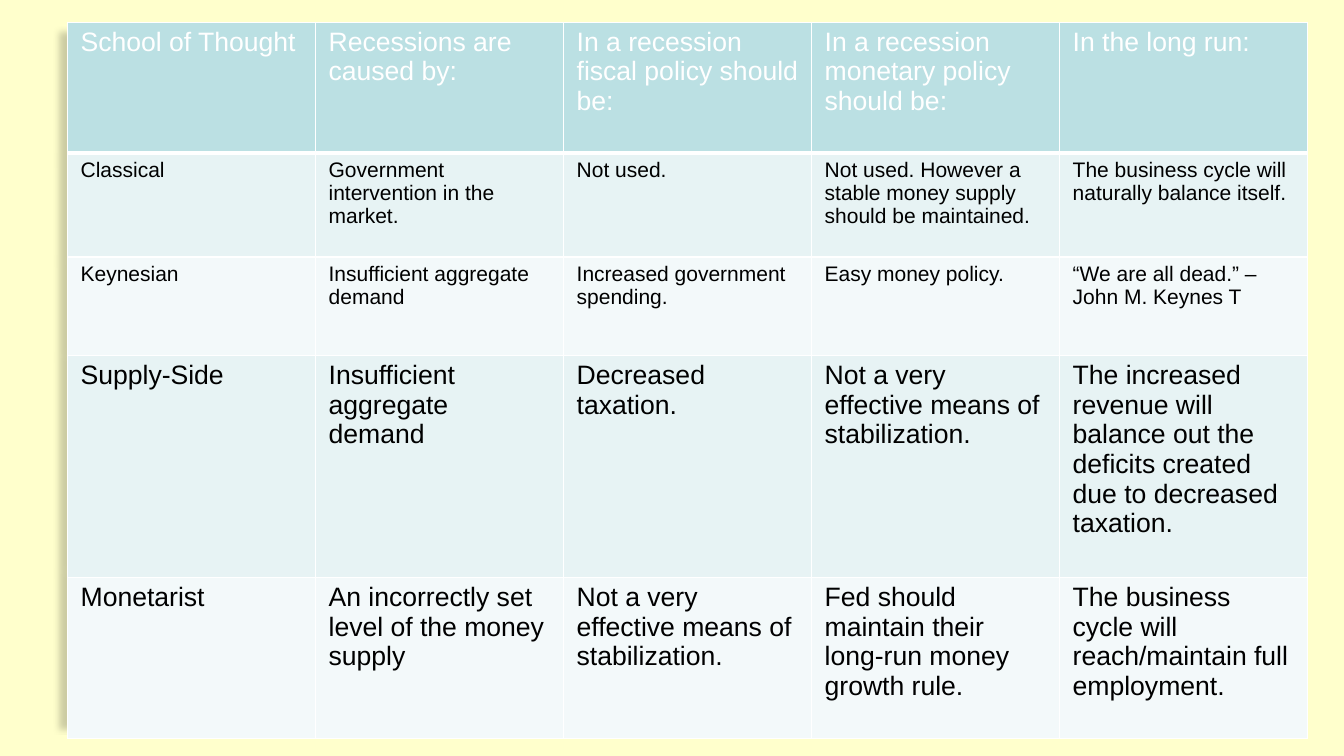
from dataclasses import dataclass
from lxml import etree
from pptx import Presentation
from pptx.dml.color import RGBColor
from pptx.oxml import parse_xml
from pptx.oxml.ns import qn
from pptx.util import Inches, Pt


@dataclass(frozen=True)
class Theme:
    font: str = "Arial"
    page: str = "FFFFCC"
    head: str = "BBE0E3"
    bands: tuple = ("E7F3F4", "F3F9FA")
    white: str = "FFFFFF"
    ink: str = "000000"
    large: int = 19
    small: int = 15


theme = Theme()


def write(cell, words, size=theme.large, color=theme.ink):
    cell.margin_left = cell.margin_right = Inches(0.13)
    cell.margin_top = cell.margin_bottom = Inches(0.05)
    run = cell.text_frame.paragraphs[0].add_run()
    run.text = words
    run.font.name = theme.font
    run.font.size = Pt(size)
    run.font.bold = False
    run.font.color.rgb = RGBColor.from_string(color)


def edge(cell, side, width):
    props = cell._tc.get_or_add_tcPr()
    line = etree.SubElement(props, qn(f"a:ln{side}"), w=str(Pt(width)))
    fill = etree.SubElement(line, qn("a:solidFill"))
    etree.SubElement(fill, qn("a:srgbClr"), val=theme.white)


# Slide and background
deck = Presentation()
deck.slide_width, deck.slide_height = Inches(13.33), Inches(7.5)
slide = deck.slides.add_slide(deck.slide_layouts[6])
slide.background.fill.solid()
slide.background.fill.fore_color.rgb = RGBColor.from_string(theme.page)

# Rows: height, type size, cell texts
rows = [
    (1.3, theme.large, [
        "School of Thought", "Recessions are caused by:",
        "In a recession fiscal policy should be:",
        "In a recession monetary policy should be:", "In the long run:"]),
    (1.03, theme.small, [
        "Classical", "Government intervention in the market.", "Not used.",
        "Not used. However a stable money supply should be maintained.",
        "The business cycle will naturally balance itself."]),
    (0.98, theme.small, [
        "Keynesian", "Insufficient aggregate demand",
        "Increased government spending.", "Easy money policy.",
        "“We are all dead.” –John M. Keynes T"]),
    (2.2, theme.large, [
        "Supply-Side", "Insufficient aggregate demand", "Decreased taxation.",
        "Not a very effective means of stabilization.",
        "The increased revenue will balance out the deficits created "
        "due to decreased taxation."]),
    (1.6, theme.large, [
        "Monetarist", "An incorrectly set level of the money supply",
        "Not a very effective means of stabilization.",
        "Fed should maintain their long-run money growth rule.",
        "The business cycle will reach/maintain full employment."]),
]

# Table with a soft shadow on its left
frame = slide.shapes.add_table(len(rows), 5, Inches(0.67), Inches(0.22),
                               Inches(12.3), Inches(7.11))
table = frame.table
table._tbl.tblPr.insert(0, parse_xml(
    '<a:effectLst xmlns:a="http://schemas.openxmlformats.org/drawingml/2006/main">'
    '<a:outerShdw blurRad="50800" dist="63500" dir="10800000" sx="97000" sy="97000" '
    'algn="l" rotWithShape="0"><a:srgbClr val="000000"><a:alpha val="20000"/>'
    '</a:srgbClr></a:outerShdw></a:effectLst>'))
for col in table.columns:
    col.width = Inches(2.46)

# Cells
for r, (height, size, texts) in enumerate(rows):
    table.rows[r].height = Inches(height)
    for c, words in enumerate(texts):
        cell = table.cell(r, c)
        write(cell, words, size=size, color=theme.ink if r else theme.white)
        for side in "LRTB":
            edge(cell, side, 3 if r == 0 and side == "B" else 1)
        cell.fill.solid()
        shade = theme.bands[(r - 1) % 2] if r else theme.head
        cell.fill.fore_color.rgb = RGBColor.from_string(shade)

deck.save("out.pptx")
